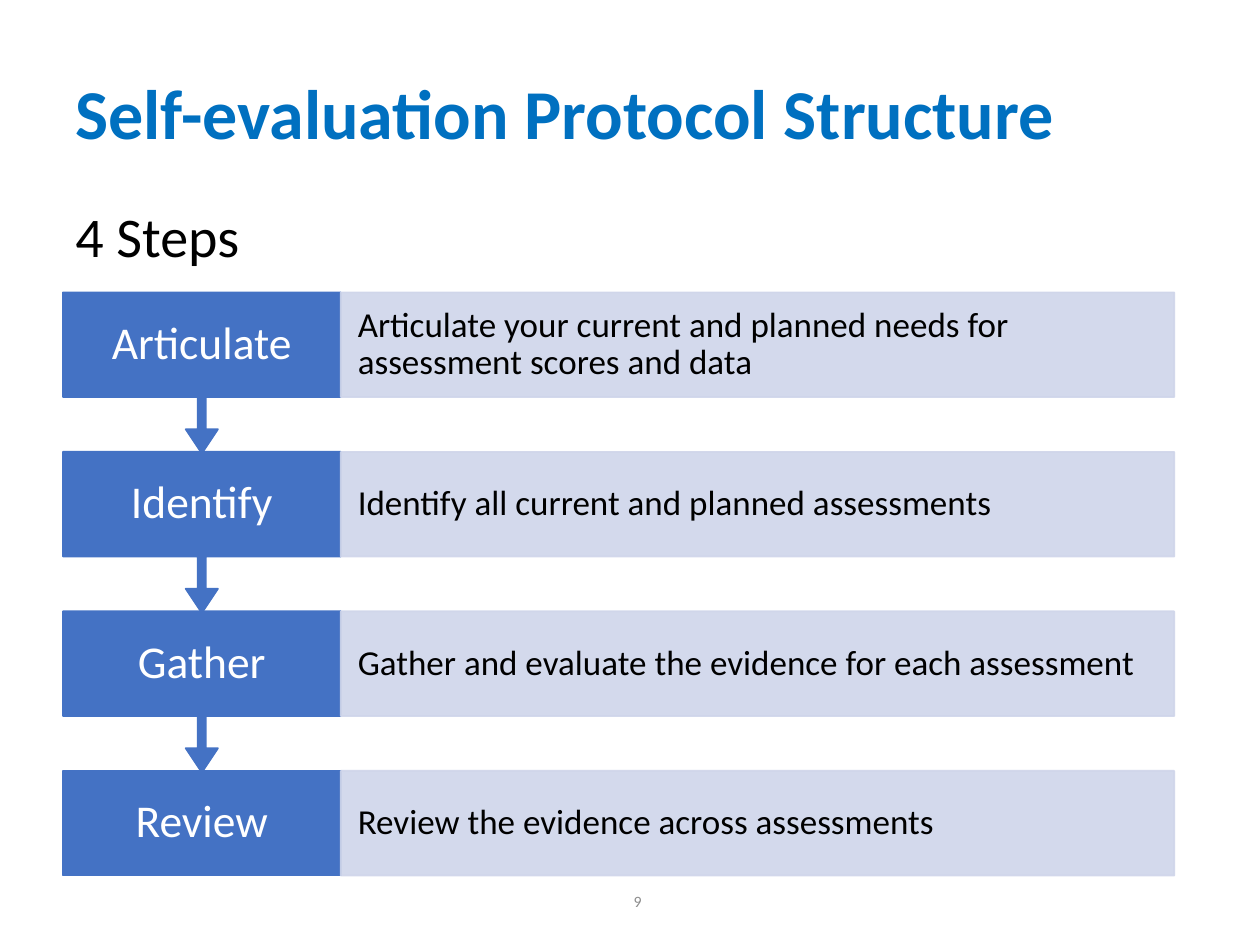
from pptx import Presentation
from pptx.dml.color import RGBColor
from pptx.enum.shapes import MSO_SHAPE as Shape
from pptx.enum.text import MSO_ANCHOR as Anchor, PP_ALIGN as Align
from pptx.oxml.ns import qn
from pptx.util import Pt
from lxml.etree import SubElement

FONT = "Calibri"
BLUE, PALE = "4472C4", "CFD5EA"
STEPS = [
    ("Articulate", "Articulate your current and planned needs for assessment scores and data"),
    ("Identify", "Identify all current and planned assessments"),
    ("Gather", "Gather and evaluate the evidence for each assessment"),
    ("Review", "Review the evidence across assessments"),
]


def color(value):
    return RGBColor.from_string(value)


def write(shape, text, size, ink, align=Align.LEFT, anchor=Anchor.MIDDLE,
          insets=(7.2, 3.6), spacing=1.0, bold=False, wrap=True):
    frame = shape.text_frame
    frame.word_wrap = wrap
    frame.vertical_anchor = anchor
    frame.margin_left = frame.margin_right = Pt(insets[0])
    frame.margin_top = frame.margin_bottom = Pt(insets[1])
    para = frame.paragraphs[0]
    para.alignment = align
    para.line_spacing = spacing
    span = para.add_run()
    span.text = text
    span.font.name = FONT
    span.font.size = Pt(size)
    span.font.bold = bold
    span.font.color.rgb = color(ink)


def add_text(page, box, text, size, ink, **style):
    shape = page.shapes.add_textbox(*map(Pt, box))
    write(shape, text, size, ink, **style)


def add_panel(page, kind, box, paint, opacity=100):
    shape = page.shapes.add_shape(kind, *map(Pt, box))
    shape.shadow.inherit = False
    shape.fill.solid()
    shape.fill.fore_color.rgb = color(paint)
    shape.line.color.rgb = color(paint)
    shape.line.width = Pt(1)
    if opacity < 100:
        for tint in shape._element.spPr.iter(qn("a:srgbClr")):
            SubElement(tint, qn("a:alpha")).set("val", str(opacity * 1000))
    return shape


def add_step(page, box, name, detail, callout_height=None):
    left, top, width, height = box
    name_width = width / 4
    # Name, with an arrow to the next step unless it is the last
    kind = Shape.DOWN_ARROW_CALLOUT if callout_height else Shape.RECTANGLE
    label = add_panel(page, kind, (left, top, name_width, callout_height or height), BLUE)
    if callout_height:
        for index, value in enumerate((0.05, 0.1, 0.15, height / callout_height)):
            label.adjustments[index] = value
    write(label, name, 26, "FFFFFF", align=Align.CENTER, insets=(11.3, 14.2), spacing=0.9)
    # Description
    panel = add_panel(page, Shape.RECTANGLE,
                      (left + name_width, top, width - name_width, height), PALE, 90)
    write(panel, detail, 20, "000000", insets=(9.7, 20.3), spacing=0.9)


def add_process(page, box):
    left, top, width, height = box
    row_height = 59.8
    pitch = (height - row_height) / (len(STEPS) - 1)
    # Last step first, so that each arrow lies over the step below it
    for index in reversed(range(len(STEPS))):
        last = index == len(STEPS) - 1
        add_step(page, (left, top + index * pitch, width, row_height), *STEPS[index],
                 callout_height=None if last else 92)


def main():
    deck = Presentation()
    deck.slide_width, deck.slide_height = Pt(720), Pt(540)
    page = deck.slides.add_slide(deck.slide_layouts[6])
    # Page number
    add_text(page, (211.7, 500.5, 162, 28.8), "9", 9, "8C8C8C", align=Align.RIGHT)
    # Heading
    add_text(page, (36, 21.6, 648, 90), "Self-evaluation Protocol Structure", 40, "0070C0",
             spacing=0.9, bold=True)
    # Steps
    add_process(page, (36, 167.1, 635, 333.2))
    add_text(page, (36, 111.6, 109.4, 46), "4 Steps", 32, "000000",
             anchor=Anchor.TOP, wrap=False)
    deck.save("out.pptx")


if __name__ == "__main__":
    main()
